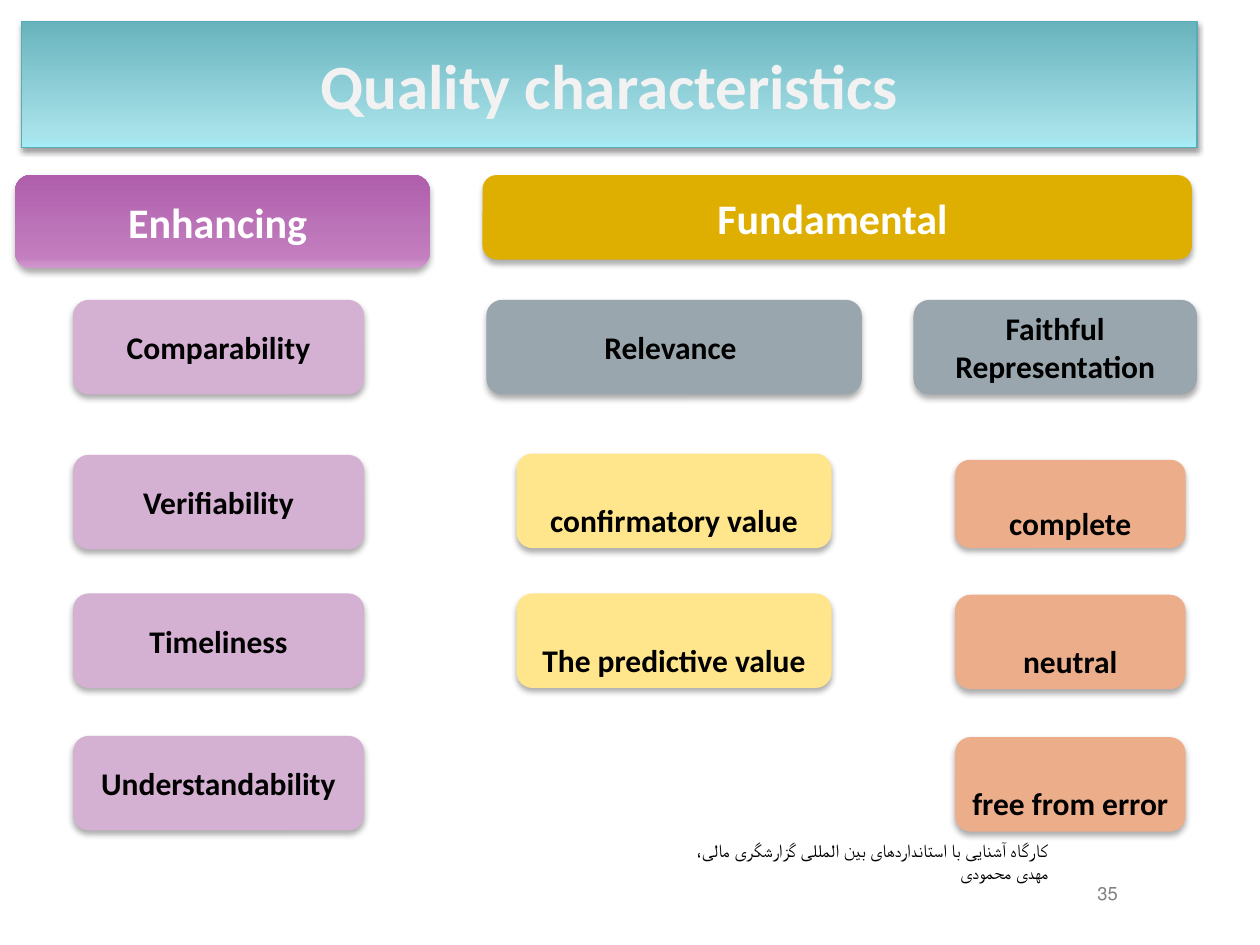
from pptx import Presentation
from pptx.dml.color import RGBColor
from pptx.enum.shapes import MSO_SHAPE as Shape
from pptx.enum.text import MSO_ANCHOR as Anchor, MSO_AUTO_SIZE as AutoSize, PP_ALIGN as Align
from pptx.oxml import parse_xml
from pptx.oxml.ns import nsdecls, qn
from pptx.util import Inches, Pt

COLORS = {
    "white": "FFFFFF", "black": "000000", "title": "F2F2F2", "number": "808080",
    "title_line": "55AEB7", "gold": "DEAE00", "gray": "99A6AE",
    "yellow": "FFE68C", "orange": "ECAD8A", "lilac": "D4B0D2",
}
TEAL = [(0, "A4ECF6"), (12, "A7E1E9"), (100, "68B3BD")]
PURPLE = [(0, "D499D1"), (12, "C37EBF"), (100, "AF5FAB")]

TITLE = "Quality characteristics"
# text, (left, top, width, height), fill
HEADERS = [
    ("Enhancing ", (0.12, 1.39, 3.29, 0.74), PURPLE),
    ("Fundamental ", (3.83, 1.39, 5.63, 0.67), COLORS["gold"]),
]
GROUPS = [
    ("Relevance ", (3.86, 2.38, 2.98, 0.75), COLORS["gray"]),
    ("Faithful Representation", (7.25, 2.38, 2.25, 0.75), COLORS["gray"]),
]
# left, width, fill, double-spaced, [(text, top, height, right-to-left)]
COLUMNS = [
    (0.58, 2.31, "lilac", False, [
        ("Comparability", 2.38, 0.75, False), ("Verifiability", 3.61, 0.75, False),
        ("Timeliness", 4.71, 0.75, False), ("Understandability", 5.84, 0.75, False)]),
    (4.1, 2.5, "yellow", True, [
        ("confirmatory value", 3.6, 0.75, True), ("The predictive value", 4.71, 0.75, True)]),
    (7.58, 1.83, "orange", True, [
        ("complete", 3.65, 0.7, True), ("neutral", 4.72, 0.75, False),
        ("free from error", 5.85, 0.75, True)]),
]
FOOTER = "کارگاه آشنایی با استانداردهای بین المللی گزارشگری مالی، مهدی محمودی"
NUMBER = "35"


def place(sp, box):
    sp.left, sp.top, sp.width, sp.height = map(Inches, box)


def set_fill(sp, fill):
    if isinstance(fill, str):
        sp.fill.solid()
        sp.fill.fore_color.rgb = RGBColor.from_string(fill)
        return
    sp.fill.gradient()
    sp.fill.gradient_angle = 90
    stops = sp.fill._fill._gradFill.find(qn("a:gsLst"))
    for stop in list(stops):
        stops.remove(stop)
    for pos, color in fill:
        stops.append(parse_xml(
            f'<a:gs {nsdecls("a")} pos="{pos * 1000}"><a:srgbClr val="{color}"/></a:gs>'))


def add_shadow(sp, alpha, blur, dist):
    sp.shadow.inherit = False
    sp._element.spPr.find(qn("a:effectLst")).append(parse_xml(
        f'<a:outerShdw {nsdecls("a")} blurRad="{Pt(blur)}" dist="{Pt(dist)}" dir="5400000" '
        f'rotWithShape="0"><a:srgbClr val="000000"><a:alpha val="{alpha * 1000}"/>'
        '</a:srgbClr></a:outerShdw>'))


def write(sp, text, size, color, bold=True, align=Align.CENTER, anchor=Anchor.MIDDLE,
          rtl=False, spacing=None):
    tf = sp.text_frame
    tf.text = text
    tf.word_wrap = True
    tf.auto_size = AutoSize.NONE
    tf.vertical_anchor = anchor
    p = tf.paragraphs[0]
    p.alignment = align
    if spacing:
        p.line_spacing = spacing
    if rtl:
        p._p.get_or_add_pPr().set("rtl", "1")
    p.font.name, p.font.size, p.font.bold = "Calibri", Pt(size), bold
    p.font.color.rgb = RGBColor.from_string(COLORS[color])


def add_card(slide, text, box, fill, size, color, **options):
    sp = slide.shapes.add_shape(Shape.ROUNDED_RECTANGLE, *map(Inches, box))
    set_fill(sp, fill)
    sp.line.fill.background()
    add_shadow(sp, 32, 3.5, 2.2)
    write(sp, text, size, color, **options)


def main():
    prs = Presentation()
    prs.slide_width, prs.slide_height = Inches(10), Inches(7.5)
    slide = prs.slides.add_slide(prs.slide_layouts[5])

    # Title banner: the placeholder takes a rounded outline
    title = slide.shapes.title
    place(title, (0.17, 0.17, 9.33, 1))
    title._element.spPr.append(parse_xml(
        f'<a:prstGeom {nsdecls("a")} prst="roundRect"><a:avLst/></a:prstGeom>'))
    set_fill(title, TEAL)
    title.line.color.rgb = RGBColor.from_string(COLORS["title_line"])
    title.line.width = Pt(0.75)
    add_shadow(title, 38, 3.1, 1.6)
    write(title, TITLE, 36, "title")

    # Headers and the two fundamental groups
    for text, box, fill in HEADERS:
        add_card(slide, text, box, fill, 24, "white")
    for text, box, fill in GROUPS:
        add_card(slide, text, box, fill, 18, "black")

    # Columns of characteristics
    for left, width, fill, double, cards in COLUMNS:
        for text, top, height, rtl in cards:
            add_card(slide, text, (left, top, width, height), COLORS[fill], 18, "black",
                     rtl=rtl, spacing=2.0 if double else None)

    # Footer and slide number
    footer = slide.shapes.add_textbox(*map(Inches, (5.33, 6.89, 3.09, 0.17)))
    write(footer, FOOTER, 10.5, "black", bold=False, align=Align.RIGHT,
          anchor=Anchor.BOTTOM, rtl=True)
    number = slide.shapes.add_textbox(*map(Inches, (8.5, 7, 0.58, 0.17)))
    write(number, NUMBER, 10.5, "number", bold=False, rtl=True)

    prs.save("out.pptx")


if __name__ == "__main__":
    main()
